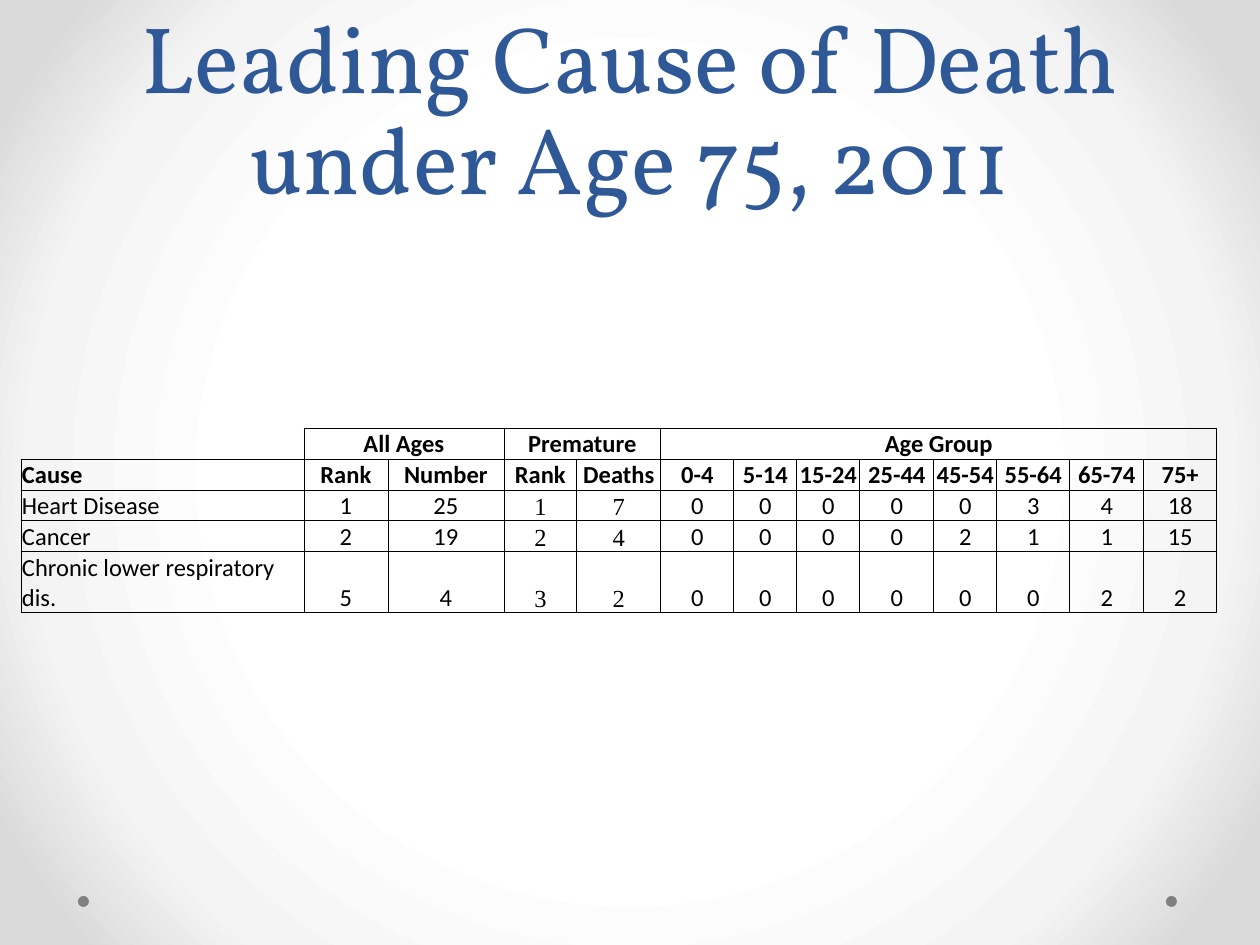
from pptx import Presentation
from pptx.dml.color import RGBColor
from pptx.enum.shapes import MSO_SHAPE
from pptx.enum.text import MSO_ANCHOR, MSO_AUTO_SIZE, PP_ALIGN
from pptx.oxml import parse_xml
from pptx.oxml.ns import nsdecls
from pptx.util import Pt

PX = 914400 / 126
OVAL = MSO_SHAPE.OVAL
BOTTOM = MSO_ANCHOR.BOTTOM
CENTER, LEFT = PP_ALIGN.CENTER, PP_ALIGN.LEFT
NO_AUTOFIT = MSO_AUTO_SIZE.NONE
TITLE_ONLY = 5

COLORS = {"title": "2F5897", "dot": "808080", "ink": "000000"}
BACKGROUND_STOPS = [(50, "FFFFFF"), (76, "F4F4F4"), (92, "DADADA")]

COLUMN_WIDTHS = [283, 84, 116, 73, 84, 73, 63, 63, 74, 63, 73, 74, 73]
ROW_HEIGHTS = [31, 31, 31, 31, 61]
PREMATURE_COLUMNS = (3, 4)
HEADER_ROWS = 2
GROUPS = [("All Ages", 1, 2), ("Premature", 3, 4), ("Age Group", 5, 12)]
ROWS = [
    ["Cause", "Rank", "Number", "Rank", "Deaths", "0-4", "5-14", "15-24",
     "25-44", "45-54", "55-64", "65-74", "75+"],
    ["Heart Disease", 1, 25, 1, 7, 0, 0, 0, 0, 0, 3, 4, 18],
    ["Cancer", 2, 19, 2, 4, 0, 0, 0, 0, 2, 1, 1, 15],
    ["Chronic lower respiratory dis.", 5, 4, 3, 2, 0, 0, 0, 0, 0, 0, 2, 2],
]


def px(length):
    return round(length * PX)


def rgb(name):
    return RGBColor.from_string(COLORS[name])


def set_background(slide):
    """Radial gradient, white in the middle and grey towards the corners."""
    stops = "".join(
        f'<a:gs pos="{percent * 1000}"><a:srgbClr val="{color}"/></a:gs>'
        for percent, color in BACKGROUND_STOPS)
    background = parse_xml(
        f'<p:bg {nsdecls("p", "a")}><p:bgPr><a:gradFill rotWithShape="1">'
        f'<a:gsLst>{stops}</a:gsLst><a:path path="circle">'
        '<a:fillToRect l="50000" t="50000" r="50000" b="50000"/></a:path>'
        '</a:gradFill><a:effectLst/></p:bgPr></p:bg>')
    slide.element.cSld.insert(0, background)


def add_dot(slide, left, top, size):
    dot = slide.shapes.add_shape(OVAL, px(left), px(top), px(size), px(size))
    dot.shadow.inherit = False
    dot.fill.solid()
    dot.fill.fore_color.rgb = rgb("dot")
    dot.line.fill.background()


def format_run(run, size, font, color, bold=False):
    run.font.size = Pt(size)
    run.font.name = font
    run.font.bold = bold
    run.font.color.rgb = rgb(color)


def set_title(slide, text):
    title = slide.shapes.title
    title.left, title.top, title.width, title.height = (
        px(63), px(0), px(1134), px(220))
    frame = title.text_frame
    frame.text = text
    frame.word_wrap = True
    frame.auto_size = NO_AUTOFIT
    frame.vertical_anchor = BOTTOM
    paragraph = frame.paragraphs[0]
    paragraph.alignment = CENTER
    paragraph.line_spacing = Pt(58)
    format_run(paragraph.runs[0], 54, "Vollkorn", "title")


def set_borders(cell, visible_sides):
    properties = cell._tc.get_or_add_tcPr()
    for side in "LRTB":
        paint = (f'<a:solidFill><a:srgbClr val="{COLORS["ink"]}"/></a:solidFill>'
                 if side in visible_sides else "<a:noFill/>")
        properties.append(parse_xml(
            f'<a:ln{side} {nsdecls("a")} w="{Pt(0.5)}">{paint}</a:ln{side}>'))


def format_cell(cell, row, column):
    set_borders(cell, "RB" if row == column == 0 else "LRTB")
    cell.fill.background()
    cell.vertical_anchor = BOTTOM
    cell.margin_left = cell.margin_right = cell.margin_top = px(1)
    cell.margin_bottom = 0
    paragraph = cell.text_frame.paragraphs[0]
    paragraph.alignment = CENTER if column else LEFT
    is_header = row < HEADER_ROWS
    is_premature = column in PREMATURE_COLUMNS and not is_header
    font = "Times New Roman" if is_premature else "Calibri"
    for run in paragraph.runs:
        format_run(run, 14, font, "ink", bold=is_header)
    if not paragraph.runs:
        paragraph._p.get_or_add_endParaRPr().set("sz", "1400")


def add_death_table(slide):
    table = slide.shapes.add_table(
        len(ROW_HEIGHTS), len(COLUMN_WIDTHS), px(21), px(428),
        px(sum(COLUMN_WIDTHS)), px(sum(ROW_HEIGHTS))).table
    table.first_row = table.horz_banding = False
    for column, width in zip(table.columns, COLUMN_WIDTHS):
        column.width = px(width)
    for row, height in zip(table.rows, ROW_HEIGHTS):
        row.height = px(height)
    for label, first, last in GROUPS:
        table.cell(0, first).merge(table.cell(0, last))
        table.cell(0, first).text = label
    for row, values in enumerate(ROWS, start=1):
        for column, value in enumerate(values):
            table.cell(row, column).text = str(value)
    for row in range(len(ROW_HEIGHTS)):
        for column in range(len(COLUMN_WIDTHS)):
            format_cell(table.cell(row, column), row, column)


def main():
    presentation = Presentation()
    presentation.slide_width, presentation.slide_height = px(1260), px(945)
    slide = presentation.slides.add_slide(
        presentation.slide_layouts[TITLE_ONLY])
    set_background(slide)
    for left in (1166, 78):
        add_dot(slide, left, 896, 11)
    set_title(slide, "Leading Cause of Death under Age 75, 2011")
    add_death_table(slide)
    presentation.save("out.pptx")


if __name__ == "__main__":
    main()
